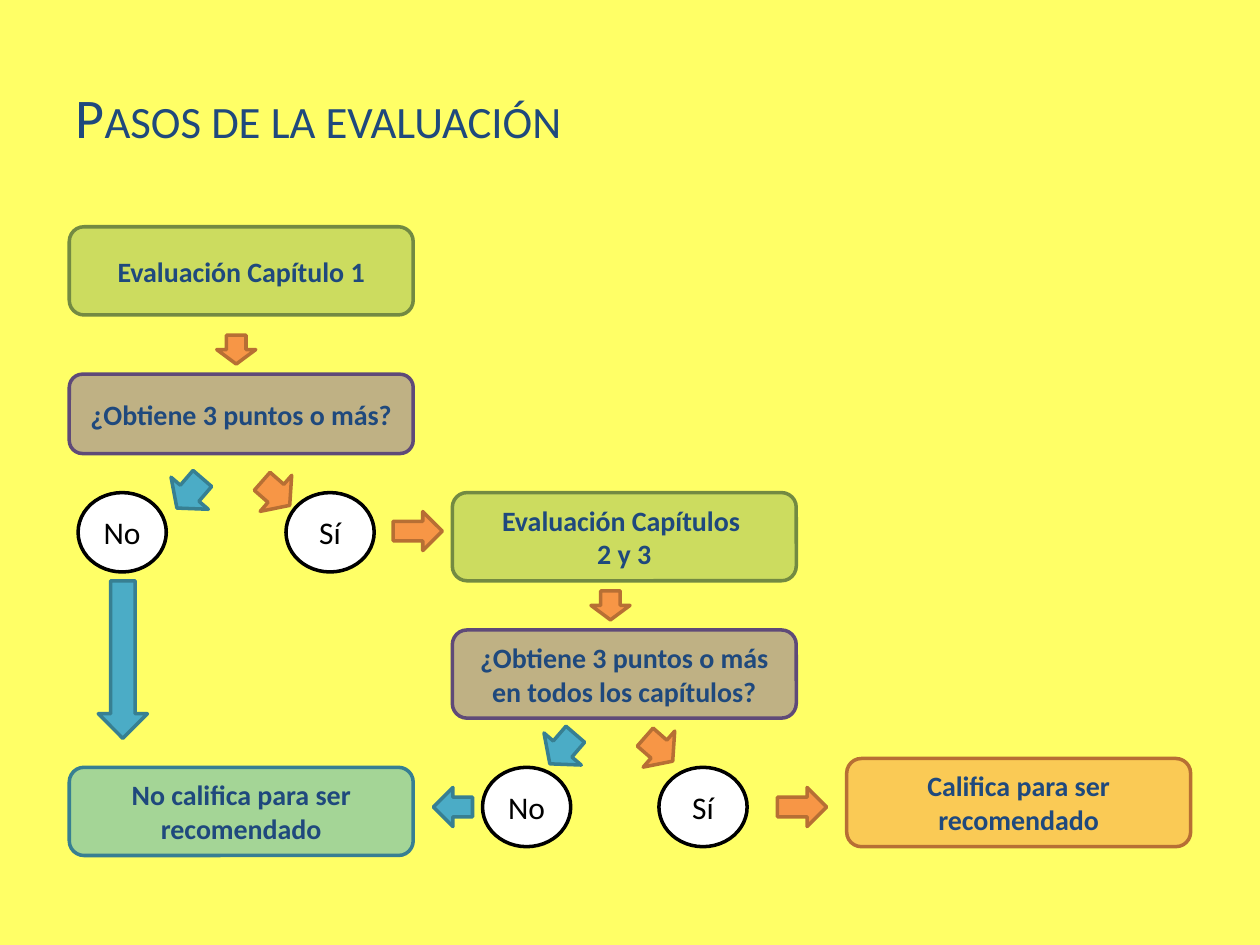
from lxml.etree import SubElement
from pptx import Presentation
from pptx.dml.color import RGBColor
from pptx.enum.shapes import MSO_SHAPE as Shape
from pptx.enum.text import MSO_ANCHOR as Anchor, PP_ALIGN as Align
from pptx.oxml.ns import qn
from pptx.util import Inches, Pt

THEME = {
    "font": "Calibri", "background": "FFFF66", "text": "1F497D", "answer_text": "000000",
    "title_size": 32, "step_size": 16, "answer_size": 18, "line": 2, "step_opacity": 50,
    # role: (fill, line)
    "chapter": ("9BBB59", "738A42"),
    "question": ("8064A2", "5F4A78"),
    "yes": ("F79646", "B76F34"),
    "no": ("4BACC6", "377F92"),
    "answer": ("FFFFFF", "000000"),
}

TITLE = "Pasos de la evaluación"
STEP_WIDTH, STEP_HEIGHT = 2.73, 0.7
ANSWER_SIZE = (0.7, 0.63)
COLUMNS = (0.55, 3.59, 6.72)

# role, column, top, height, paragraphs
STEPS = [
    ("chapter", 0, 1.8, STEP_HEIGHT, ["Evaluación Capítulo 1"]),
    ("question", 0, 2.97, 0.63, ["¿Obtiene 3 puntos o más?"]),
    ("chapter", 1, 3.91, STEP_HEIGHT, ["Evaluación Capítulos ", "2 y 3"]),
    ("question", 1, 5, STEP_HEIGHT, ["¿Obtiene 3 puntos o más en todos los capítulos?"]),
    ("yes", 2, 6.02, STEP_HEIGHT, ["Califica para ser recomendado"]),
    ("no", 0, 6.09, STEP_HEIGHT, ["No califica para ser recomendado"]),
]

# text, left, top
ANSWERS = [("No", 0.62, 3.91), ("Sí", 2.27, 3.91), ("No", 3.83, 6.09), ("Sí", 5.23, 6.09)]

# direction: (preset, width, height, rotation)
ARROW_KINDS = {
    "next": (Shape.DOWN_ARROW, 0.31, 0.23, 0),
    "long": (Shape.DOWN_ARROW, 0.39, 1.25, 0),
    "down_right": (Shape.DOWN_ARROW, 0.38, 0.29, 311.2),
    "down_left": (Shape.DOWN_ARROW, 0.39, 0.31, 40.7),
    "right": (Shape.RIGHT_ARROW, 0.39, 0.31, 0),
    "left": (Shape.LEFT_ARROW, 0.31, 0.31, 0),
}

# direction, role, left, top
ARROWS = [
    ("next", "yes", 1.72, 2.66),
    ("down_right", "yes", 2, 3.77),
    ("down_left", "no", 1.31, 3.76),
    ("down_right", "yes", 5.04, 5.8),
    ("down_left", "no", 4.27, 5.79),
    ("next", "yes", 4.69, 4.69),
    ("long", "no", 0.78, 4.61),
    ("right", "yes", 6.17, 6.25),
    ("left", "no", 3.44, 6.25),
    ("right", "yes", 3.12, 4.06),
]


def color(name):
    return RGBColor.from_string(name)


def write(shape, paragraphs, *, size, ink, bold=False, align=Align.CENTER, small_caps=False):
    frame = shape.text_frame
    frame.word_wrap = True
    frame.vertical_anchor = Anchor.MIDDLE
    for index, text in enumerate(paragraphs):
        paragraph = frame.add_paragraph() if index else frame.paragraphs[0]
        paragraph.alignment = align
        run = paragraph.add_run()
        run.text = text
        run.font.name = THEME["font"]
        run.font.size = Pt(size)
        run.font.bold = bold
        run.font.color.rgb = color(ink)
        if small_caps:
            run.font._element.set("cap", "small")


def add_part(slide, preset, role, left, top, width, height, opacity=100):
    """Add a preset shape in the colours of its role."""
    part = slide.shapes.add_shape(
        preset, Inches(left), Inches(top), Inches(width), Inches(height))
    part.shadow.inherit = False
    fill, line = THEME[role]
    part.fill.solid()
    part.fill.fore_color.rgb = color(fill)
    part.line.color.rgb = color(line)
    part.line.width = Pt(THEME["line"])
    if opacity < 100:
        solid = part._element.spPr.find(qn("a:solidFill"))
        SubElement(solid[0], qn("a:alpha"), val=str(opacity * 1000))
    return part


def main():
    deck = Presentation()
    deck.slide_width, deck.slide_height = Inches(10), Inches(7.5)
    slide = deck.slides.add_slide(deck.slide_layouts.get_by_name("Title Only"))
    slide.background.fill.solid()
    slide.background.fill.fore_color.rgb = color(THEME["background"])

    title = slide.shapes.title
    title.left, title.top = Inches(0.5), Inches(0.3)
    title.width, title.height = Inches(7.81), Inches(1.25)
    write(title, [TITLE], size=THEME["title_size"], ink=THEME["text"],
          align=Align.LEFT, small_caps=True)

    for role, column, top, height, paragraphs in STEPS:
        step = add_part(slide, Shape.ROUNDED_RECTANGLE, role, COLUMNS[column], top,
                        STEP_WIDTH, height, THEME["step_opacity"])
        write(step, paragraphs, size=THEME["step_size"], ink=THEME["text"], bold=True)

    for text, left, top in ANSWERS:
        answer = add_part(slide, Shape.OVAL, "answer", left, top, *ANSWER_SIZE)
        write(answer, [text], size=THEME["answer_size"], ink=THEME["answer_text"])

    for direction, role, left, top in ARROWS:
        preset, width, height, rotation = ARROW_KINDS[direction]
        arrow = add_part(slide, preset, role, left, top, width, height)
        arrow.rotation = rotation

    deck.save("out.pptx")


if __name__ == "__main__":
    main()
